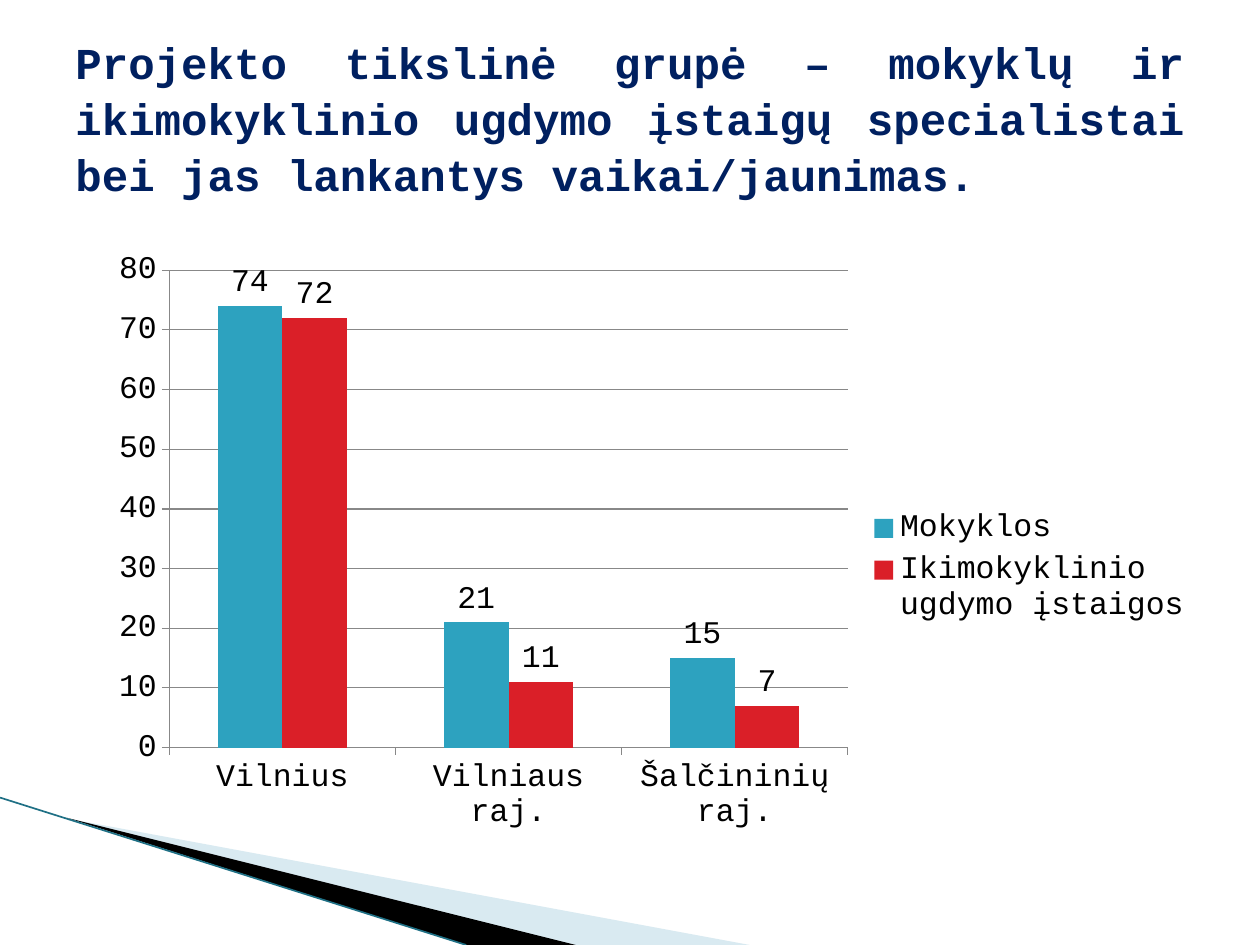
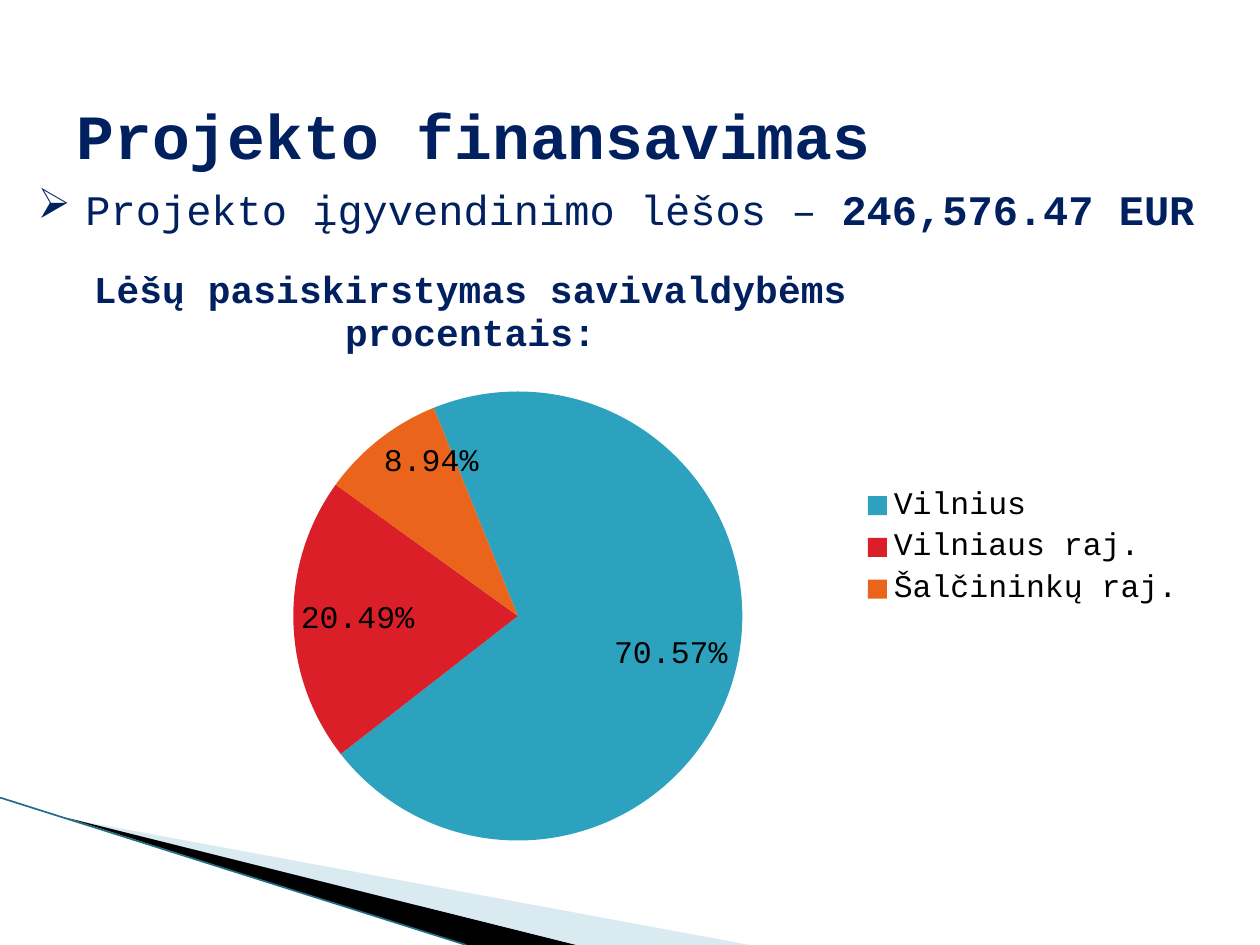
from dataclasses import dataclass

from lxml import etree
from pptx import Presentation
from pptx import util as u
from pptx.chart import data as chart_data
from pptx.dml.color import RGBColor
from pptx.enum import chart as charts, shapes, text
from pptx.oxml import ns

Inches, Pt = u.Inches, u.Pt


@dataclass(frozen=True)
class Theme:
    font: str = "Courier New"
    navy: str = "002060"
    black: str = "000000"
    pale: str = "A0CBDC"
    edge: str = "1F7085"
    grid: str = "888888"
    series: tuple = ("2DA2BF", "DA1F28", "EB641B")
    heading: float = 36
    statement: float = 25.2
    body: float = 24
    chart_title: float = 21.6
    chart: float = 18


def add_xml(parent, tag, **attributes):
    return etree.SubElement(parent, ns.qn(tag), attributes)


def paint(fill, color):
    fill.solid()
    fill.fore_color.rgb = RGBColor.from_string(color)


class SlideBuilder:
    def __init__(self, theme):
        self.theme = theme
        self.deck = Presentation()
        self.deck.slide_width, self.deck.slide_height = Inches(10), Inches(7.5)
        self.page = None

    def style(self, font, size, color, bold=False):
        font.name, font.size, font.bold = self.theme.font, Pt(size), bold
        font.color.rgb = RGBColor.from_string(color)

    def new_page(self):
        """Start a slide with the swoosh in its lower left corner."""
        self.page = self.deck.slides.add_slide(self.deck.slide_layouts[6])
        self.wedge([(0.55, 6.5), (5.95, 7.5), (4.56, 7.5)], self.theme.pale, 40)
        self.wedge([(0.53, 6.49), (4.57, 7.5), (3.7, 7.5)], self.theme.black)
        self.line((0, 6.33), (3.7, 7.5), self.theme.edge, 0.95)

    def wedge(self, points, color, opacity=100):
        corners = [(Inches(x), Inches(y)) for x, y in points]
        builder = self.page.shapes.build_freeform(*corners[0])
        builder.add_line_segments(corners[1:], close=True)
        shape = builder.convert_to_shape()
        shape.shadow.inherit = False
        shape.line.fill.background()
        paint(shape.fill, color)
        if opacity < 100:
            tint = next(shape.element.iter(ns.qn("a:srgbClr")))
            add_xml(tint, "a:alpha", val=str(opacity * 1000))

    def line(self, start, end, color, width):
        ends = [Inches(value) for value in start + end]
        line = self.page.shapes.add_connector(shapes.MSO_CONNECTOR.STRAIGHT, *ends)
        line.line.color.rgb = RGBColor.from_string(color)
        line.line.width = Pt(width)
        add_xml(line.element.spPr, "a:effectLst")

    def text_box(self, place, anchor):
        box = self.page.shapes.add_textbox(*map(Inches, place))
        box.text_frame.word_wrap = True
        box.text_frame.vertical_anchor = anchor
        return box.text_frame

    def title(self, place, wording, size, align=text.PP_ALIGN.LEFT, spacing=1.0):
        frame = self.text_box(place, text.MSO_ANCHOR.MIDDLE)
        frame.text = wording
        para = frame.paragraphs[0]
        para.alignment, para.line_spacing = align, spacing
        self.style(para.runs[0].font, size, self.theme.navy, bold=True)

    def bullet(self, place, wording, emphasis):
        para = self.text_box(place, text.MSO_ANCHOR.TOP).paragraphs[0]
        properties = para._p.get_or_add_pPr()
        indent = Inches(0.38)
        properties.set("marL", str(indent))
        properties.set("indent", str(-indent))
        add_xml(properties, "a:buChar", char="➢")
        for words, bold in ((wording, False), (emphasis, True)):
            span = para.add_run()
            span.text = words
            self.style(span.font, self.theme.body, self.theme.navy, bold)

    def chart(self, kind, place, categories, series, plot_area, label_position,
              number_format="General"):
        """Add a chart with a right legend, value labels and a fixed inner plot area."""
        data = chart_data.CategoryChartData(number_format=number_format)
        data.categories = categories
        for name, values in series:
            data.add_series(name, values)
        chart = self.page.shapes.add_chart(kind, *map(Inches, place), data).chart
        self.style(chart.font, self.theme.chart, self.theme.black)
        chart.has_title = False
        chart.has_legend = True
        chart.legend.position = charts.XL_LEGEND_POSITION.RIGHT
        chart.legend.include_in_layout = False
        plot = chart.plots[0]
        plot.has_data_labels = True
        labels = plot.data_labels
        labels.show_value, labels.show_percentage = True, False
        labels.position = label_position
        labels.number_format, labels.number_format_is_linked = number_format, False
        area = next(chart.element.iter(ns.qn("c:plotArea")))
        self.layout(area, plot_area, inner=True)
        return chart

    def layout(self, parent, fractions, inner=False):
        """Place a chart part by fractions of the chart: x, y and perhaps w, h."""
        holder = parent.find(ns.qn("c:layout"))
        if holder is None:
            holder = add_xml(parent, "c:layout")
            text_part = parent.find(ns.qn("c:tx"))
            if text_part is None:
                parent.insert(0, holder)
            else:
                text_part.addnext(holder)
        manual = add_xml(holder, "c:manualLayout")
        if inner:
            add_xml(manual, "c:layoutTarget", val="inner")
        for name in ("xMode", "yMode"):
            add_xml(manual, f"c:{name}", val="edge")
        for name, value in zip("xywh", fractions):
            add_xml(manual, f"c:{name}", val=str(value))

    def column_chart(self, place, categories, series, plot_area, top, step):
        chart = self.chart(charts.XL_CHART_TYPE.COLUMN_CLUSTERED, place, categories,
                           series, plot_area, charts.XL_LABEL_POSITION.OUTSIDE_END)
        plot = chart.plots[0]
        plot.gap_width, plot.overlap, plot.vary_by_categories = 150, 0, False
        for bars, color in zip(plot.series, self.theme.series):
            paint(bars.format.fill, color)
        scale = chart.value_axis
        scale.minimum_scale, scale.maximum_scale, scale.major_unit = 0, top, step
        scale.has_major_gridlines = True
        for axis in (scale, chart.category_axis):
            axis.major_tick_mark = charts.XL_TICK_MARK.OUTSIDE
        for part in (scale, chart.category_axis, scale.major_gridlines):
            part.format.line.color.rgb = RGBColor.from_string(self.theme.grid)
            part.format.line.width = Pt(0.75)

    def pie_chart(self, place, title, title_corner, categories, series, plot_area, angle):
        chart = self.chart(charts.XL_CHART_TYPE.PIE, place, categories, [series],
                           plot_area, charts.XL_LABEL_POSITION.INSIDE_END, "0.00%")
        chart.has_title = True
        heading = chart.chart_title
        heading.text_frame.text = title
        self.style(heading.text_frame.paragraphs[0].runs[0].font,
                   self.theme.chart_title, self.theme.navy, bold=True)
        self.layout(next(chart.element.iter(ns.qn("c:title"))), title_corner)
        plot = chart.plots[0]
        plot.vary_by_categories = True
        for index, color in enumerate(self.theme.series):
            paint(plot.series[0].points[index].format.fill, color)
        pie = next(chart.element.iter(ns.qn("c:pieChart")))
        for old in pie.findall(ns.qn("c:firstSliceAng")):
            pie.remove(old)
        add_xml(pie, "c:firstSliceAng", val=str(angle))


def target_group(slides):
    slides.new_page()
    slides.title(
        (0.5, 0.3, 9, 1.25),
        "Projekto tikslinė grupė – mokyklų ir ikimokyklinio ugdymo įstaigų "
        "specialistai bei jas lankantys vaikai/jaunimas.",
        slides.theme.statement, text.PP_ALIGN.JUSTIFY, spacing=1.06)
    slides.column_chart(
        (0.43, 1.94, 9.13, 5.12),
        ["Vilnius", "Vilniaus raj.", "Šalčininių raj."],
        [("Mokyklos", (74, 21, 15)),
         ("Ikimokyklinio ugdymo įstaigos", (72, 11, 7))],
        plot_area=(0.1, 0.04, 0.59, 0.74), top=80, step=10)


def funding(slides):
    slides.new_page()
    slides.pie_chart(
        (0.51, 1.87, 9, 4.95),
        "Lėšų pasiskirstymas savivaldybėms procentais:", (0.02, 0.04),
        ["Vilnius", "Vilniaus raj.", "Šalčininkų raj."],
        ("Series 1", (0.7057, 0.2049, 0.0894)),
        plot_area=(0.2, 0.25, 0.4, 0.72), angle=338)
    slides.title((0.51, 0.67, 9, 0.8), "Projekto finansavimas", slides.theme.heading)
    slides.bullet((0.2, 1.41, 9.8, 0.5),
                  "Projekto įgyvendinimo lėšos – ", "246,576.47 EUR")


def main():
    slides = SlideBuilder(Theme())
    target_group(slides)
    funding(slides)
    slides.deck.save("out.pptx")


if __name__ == "__main__":
    main()
